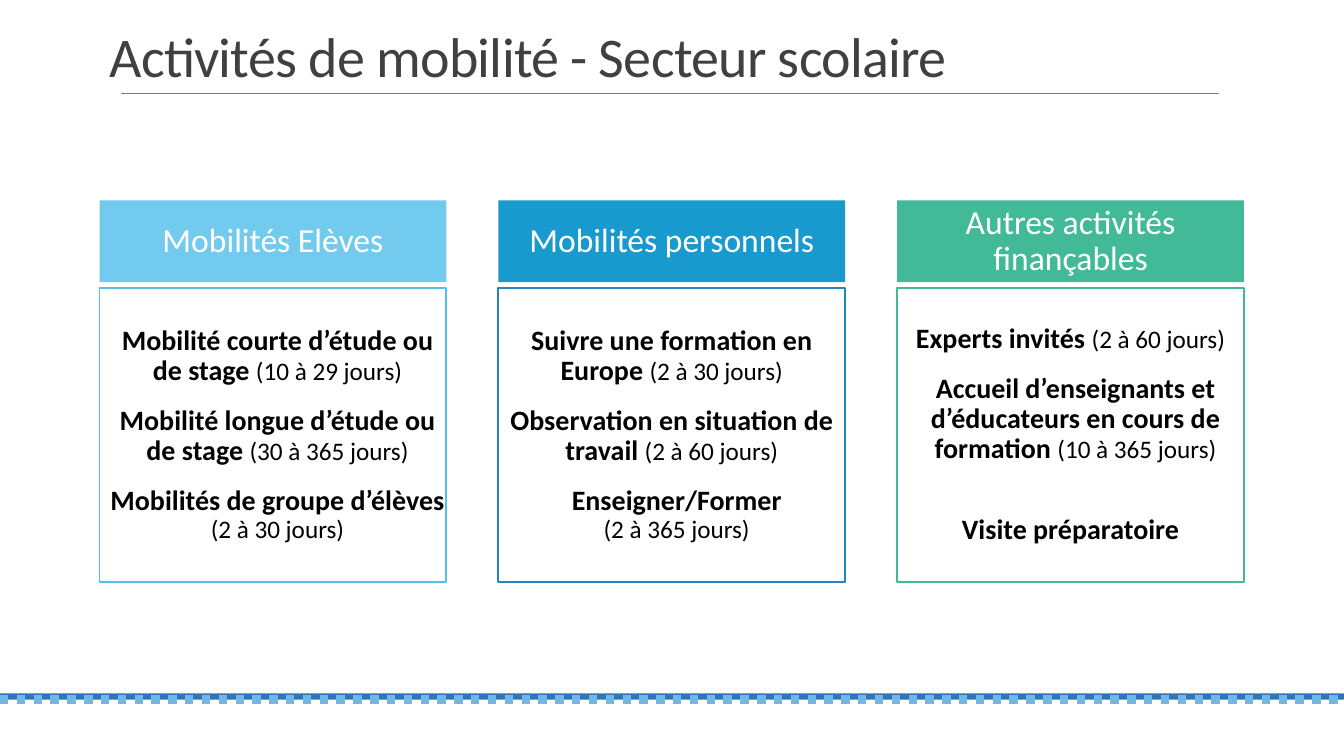
from pptx import Presentation
from pptx.dml.color import RGBColor
from pptx.enum import dml, shapes, text
from pptx.oxml import parse_xml
from pptx.oxml.ns import nsdecls
from pptx.util import Cm, Pt

# Content: (heading, fill, outline, items)
# Item: (bold label, duration, left indent in cm, space before in pt, break)
TITLE = "Activités de mobilité - Secteur scolaire"
COLUMNS = [
    ("Mobilités Elèves", "72CBEE", "54BFEA", [
        ("Mobilité courte d’étude ou de stage ", "(10 à 29 jours)", 0.23, 0, False),
        ("Mobilité longue d’étude ou de stage ", "(30 à 365 jours)", 0.23, 12, False),
        ("Mobilités de groupe d’élèves ", "(2 à 30 jours)", 0.23, 12, False),
    ]),
    ("Mobilités personnels", "189ACE", "2683C6", [
        ("Suivre une formation en Europe ", "(2 à 30 jours)", 0, 0, False),
        ("Observation en situation de travail ", "(2 à 60 jours)", 0, 12, False),
        ("Enseigner/Former", "(2 à 365 jours)", 0.25, 12, True),
    ]),
    ("Autres activités finançables", "42BA97", "42BA97", [
        ("Experts invités ", "(2 à 60 jours)", 0, 0, False),
        ("Accueil d’enseignants et d’éducateurs en cours de formation ",
         "(10 à 365 jours)", 0.25, 12, False),
        ("Visite préparatoire", "", 0, 34, False),
    ]),
]
THEME = {
    "font": "Calibri", "title": "404040", "rule": "7F7F7F", "band": "2E75B6",
    "dots": "75B6E5", "white": "FFFFFF", "ink": "000000",
    "title_pt": 40, "head_pt": 24, "item_pt": 20, "days_pt": 18,
}

# Layout, in cm
WIDE, HIGH = 33.87, 19.05
LEFT, PITCH, COL = 2.51, 10.05, 8.74
HEAD_TOP, HEAD_H = 5.05, 2.06
BODY_TOP, BODY_H = 7.25, 7.41
BAND_TOP, BAND_H = 17.47, 0.16


def rgb(name):
    return RGBColor.from_string(THEME.get(name, name))


def box(slide, x, y, w, h, fill, line=None):
    rect = slide.shapes.add_shape(
        shapes.MSO_SHAPE.RECTANGLE, Cm(x), Cm(y), Cm(w), Cm(h))
    rect.shadow.inherit = False
    rect.fill.solid()
    rect.fill.fore_color.rgb = rgb(fill)
    if line:
        rect.line.color.rgb = rgb(line)
        rect.line.width = Pt(1.25)
    else:
        rect.line.fill.background()
    rect.text_frame.word_wrap = True
    rect.text_frame.vertical_anchor = text.MSO_ANCHOR.MIDDLE
    return rect


def rule(slide, x1, x2, y, color, width):
    line = slide.shapes.add_connector(
        shapes.MSO_CONNECTOR.STRAIGHT, Cm(x1), Cm(y), Cm(x2), Cm(y))
    line.line.color.rgb = rgb(color)
    line.line.width = Pt(width)
    line._element.spPr.append(parse_xml(f"<a:effectLst {nsdecls('a')}/>"))
    return line


def style(para, size, color, align=text.PP_ALIGN.CENTER, lines=0.9):
    para.alignment = align
    para.line_spacing = lines
    para.font.name = THEME["font"]
    para.font.size = Pt(THEME[size])
    para.font.color.rgb = rgb(color)


def add_item(para, label, days, indent, before, wrap):
    style(para, "item_pt", "ink")
    para.space_before, para.space_after = Pt(before), Pt(2)
    if indent:
        para._p.get_or_add_pPr().set("marL", str(Cm(indent)))
    run = para.add_run()
    run.text = label
    run.font.bold = True
    if wrap:
        para.add_line_break()
    if days:
        run = para.add_run()
        run.text = days
        run.font.size = Pt(THEME["days_pt"])


def add_column(slide, x, heading, fill, outline, items):
    head = box(slide, x, HEAD_TOP, COL, HEAD_H, fill)
    para = head.text_frame.paragraphs[0]
    para.text = heading
    style(para, "head_pt", "white")

    frame = box(slide, x, BODY_TOP, COL, BODY_H, "white", outline).text_frame
    frame.margin_left = frame.margin_right = 0
    for i, item in enumerate(items):
        add_item(frame.add_paragraph() if i else frame.paragraphs[0], *item)


def main():
    deck = Presentation()
    deck.slide_width, deck.slide_height = Cm(WIDE), Cm(HIGH)
    slide = deck.slides.add_slide(deck.slide_layouts[6])

    # Title rule and bottom band
    rule(slide, 3.05, 30.73, 2.36, "rule", 0.75)
    box(slide, 0, BAND_TOP, WIDE, BAND_H, "band")
    dots = rule(slide, 0, WIDE, BAND_TOP + BAND_H, "dots", 6)
    dots.line.dash_style = dml.MSO_LINE.ROUND_DOT

    # Title
    frame = slide.shapes.add_textbox(
        Cm(LEFT), Cm(0.05), Cm(30.07), Cm(2.31)).text_frame
    frame.word_wrap = True
    frame.vertical_anchor = text.MSO_ANCHOR.BOTTOM
    para = frame.paragraphs[0]
    para.text = TITLE
    style(para, "title_pt", "title", text.PP_ALIGN.LEFT, 0.85)
    para.runs[0].font._element.set("spc", "-50")

    # Columns
    for i, column in enumerate(COLUMNS):
        add_column(slide, LEFT + i * PITCH, *column)

    deck.save("out.pptx")


if __name__ == "__main__":
    main()
